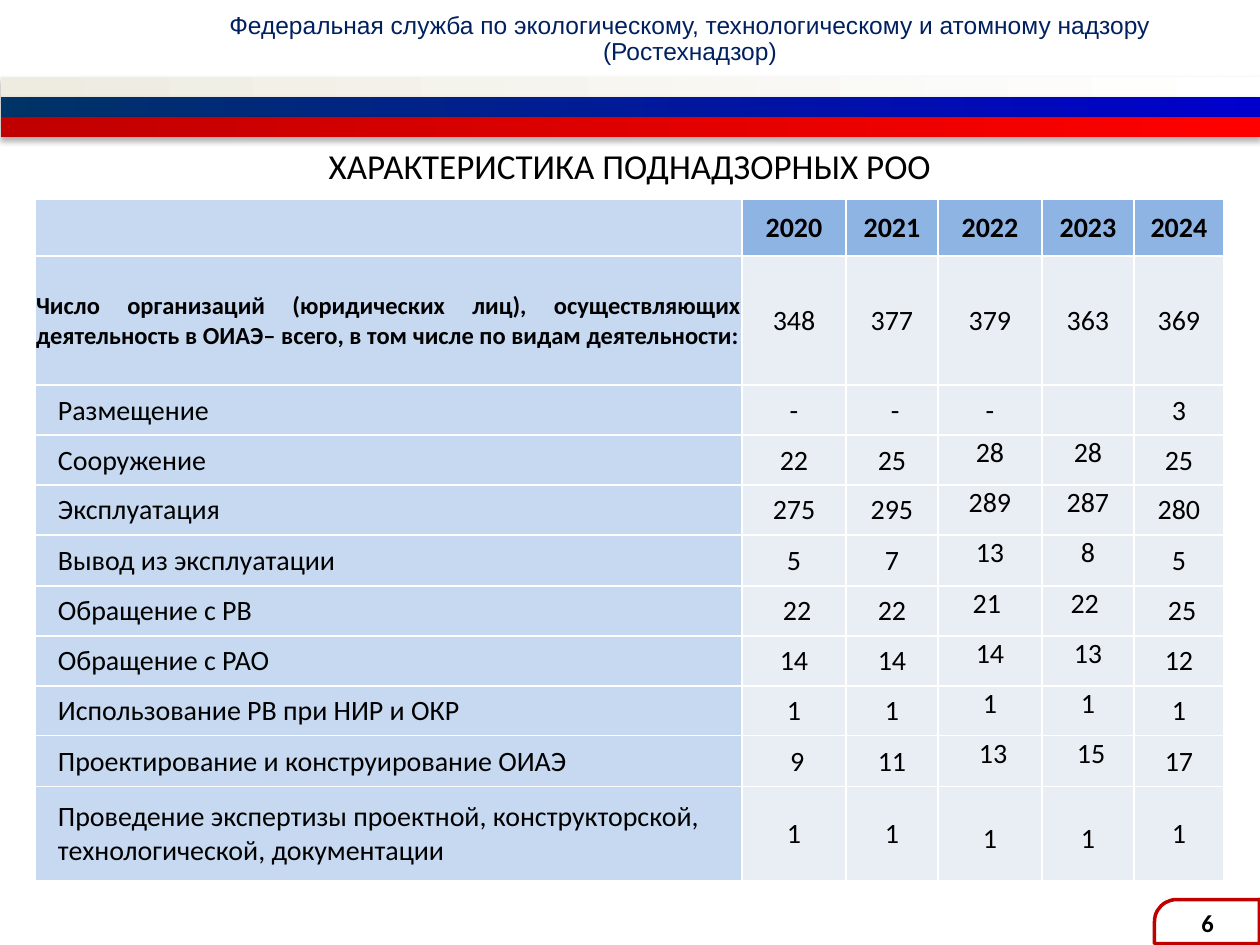
"""Build the slide with the yearly table of supervised organisations."""
import dataclasses

import lxml.etree
import pptx
import pptx.dml.color
import pptx.enum.shapes
import pptx.enum.text
import pptx.oxml
import pptx.oxml.ns
import pptx.util

ALIGN = pptx.enum.text.PP_ALIGN
ANCHOR = pptx.enum.text.MSO_ANCHOR
SHAPE = pptx.enum.shapes.MSO_SHAPE
SCALE = 914400 / 126


@dataclasses.dataclass(frozen=True)
class Theme:
    body: str = "Calibri"
    head: str = "Arial"
    ink: str = "000000"
    navy: str = "002060"
    edge: str = "FFFFFF"
    frame: str = "C00000"
    label: str = "C6D9F1"
    year: str = "8EB4E3"
    cell: str = "E9EDF4"
    bands: tuple = (("EEECE1", "FFFFFF"), ("003366", "0000CC"), ("C00000", "FF0000"))
    small: int = 14
    base: int = 16
    large: int = 20


def px(num):
    return pptx.util.Emu(round(num * SCALE))


def rgb(code):
    return pptx.dml.color.RGBColor.from_string(code)


def write(frame, text, font, size, color, bold=False, align=ALIGN.CENTER, lead=None):
    for num, line in enumerate(text.split("\n")):
        para = frame.add_paragraph() if num else frame.paragraphs[0]
        para.alignment = align
        if lead:
            para.line_spacing = pptx.util.Pt(lead)
        run = para.add_run()
        run.text = line
        run.font.name = font
        run.font.size = pptx.util.Pt(size)
        run.font.bold = bold
        run.font.color.rgb = rgb(color)


class Deck:
    def __init__(self, theme):
        self.theme = theme
        self.file = pptx.Presentation()
        self.file.slide_width, self.file.slide_height = px(1260), px(945)
        self.slide = self.file.slides.add_slide(self.file.slide_layouts[6])

    def text(self, area, text, anchor=ANCHOR.MIDDLE, **style):
        frame = self.slide.shapes.add_textbox(*map(px, area)).text_frame
        frame.word_wrap = True
        frame.vertical_anchor = anchor
        frame.margin_left = frame.margin_right = px(13)
        frame.margin_top = frame.margin_bottom = 0
        write(frame, text, **style)

    def band(self, area, colors):
        shape = self.slide.shapes.add_shape(SHAPE.RECTANGLE, *map(px, area))
        shape.line.fill.background()
        shape.fill.gradient()
        shape.fill.gradient_angle = 0
        for stop, color in zip(shape.fill.gradient_stops, colors):
            stop.color.rgb = rgb(color)
        shape.shadow.inherit = False
        glow = shape.element.spPr.find(pptx.oxml.ns.qn("a:effectLst"))
        glow.append(pptx.oxml.parse_xml(
            f'<a:outerShdw {pptx.oxml.ns.nsdecls("a")} blurRad="44450" dist="27940" '
            'dir="5400000" algn="ctr" rotWithShape="0"><a:srgbClr val="000000">'
            '<a:alpha val="32000"/></a:srgbClr></a:outerShdw>'))

    def tab(self, area):
        shape = self.slide.shapes.add_shape(SHAPE.ROUND_1_RECTANGLE, *map(px, area))
        shape.adjustments[0] = 0.5
        shape.rotation = 270
        shape.shadow.inherit = False
        shape.fill.background()
        shape.line.color.rgb = rgb(self.theme.frame)
        shape.line.width = pptx.util.Pt(2)

    def cell(self, cell, text, fill, left=1, top=1, anchor=ANCHOR.MIDDLE, **style):
        cell.margin_left, cell.margin_top = px(left), px(top)
        cell.margin_right, cell.margin_bottom = px(1), 0
        cell.vertical_anchor = anchor
        props = cell._tc.get_or_add_tcPr()
        for side in "LRTB":
            line = lxml.etree.SubElement(props, pptx.oxml.ns.qn(f"a:ln{side}"), w="12700")
            solid = lxml.etree.SubElement(line, pptx.oxml.ns.qn("a:solidFill"))
            lxml.etree.SubElement(solid, pptx.oxml.ns.qn("a:srgbClr"), val=self.theme.edge)
        cell.fill.solid()
        cell.fill.fore_color.rgb = rgb(fill)
        if text:
            write(cell.text_frame, text, font=self.theme.body, color=self.theme.ink, **style)

    def table(self, left, top, cols, rows, data):
        look = self.theme
        area = map(px, (left, top, sum(cols), sum(rows)))
        table = self.slide.shapes.add_table(len(rows), len(cols), *area).table
        for col, wide in zip(table.columns, cols):
            col.width = px(wide)
        for row, tall in zip(table.rows, rows):
            row.height = px(tall)
        for r, line in enumerate(data):
            for c, text in enumerate(line):
                style = {"fill": look.cell, "size": look.base}
                if c == 0:
                    style["fill"] = look.label
                    if r == 1:
                        style.update(size=look.small, bold=True, align=ALIGN.JUSTIFY)
                    else:
                        style.update(left=23, align=ALIGN.LEFT)
                elif r == 0:
                    style.update(fill=look.year, bold=True)
                elif r > 2 and c in (3, 4):
                    style.update(anchor=ANCHOR.TOP, top=35 if r == len(rows) - 1 else 1)
                self.cell(table.cell(r, c), text, **style)


DATA = [
    ("", "2020", "2021", "2022", "2023", "2024"),
    ("Число организаций (юридических лиц), осуществляющих деятельность в ОИАЭ– всего, "
     "в том числе по видам деятельности:", "348", "377", "379", "363", "369"),
    ("Размещение", "-", " -", "-", "", "3"),
    ("Сооружение", "22", "25", "28", "28", "25"),
    ("Эксплуатация", "275", "295", "289", "287", "280"),
    ("Вывод из эксплуатации", "5", "7", "13", "8", "5"),
    ("Обращение с РВ", " 22", "22", "21 ", "22 ", " 25"),
    ("Обращение с РАО", "14", "14", "14", "13", "12"),
    ("Использование РВ при НИР и ОКР", "1", "1", "1", "1", "1"),
    ("Проектирование и конструирование ОИАЭ", " 9", "11", " 13", " 15", "17"),
    ("Проведение экспертизы проектной, конструкторской, технологической, документации",
     "1", "1", "1", "1", "1"),
]


def main():
    look = Theme()
    deck = Deck(look)
    deck.text((123, 13, 1134, 54),
              "Федеральная служба по экологическому, технологическому и атомному надзору\n"
              "(Ростехнадзор)",
              anchor=ANCHOR.TOP, font=look.head, size=look.small, color=look.navy, lead=15)
    for num, colors in enumerate(look.bands):
        deck.band((1, 77 + 20 * num, 1259, 20), colors)
    deck.tab((1185, 869, 44, 105))
    deck.text((0, 131, 1260, 68), "ХАРАКТЕРИСТИКА ПОДНАДЗОРНЫХ РОО",
              font=look.body, size=look.large, color=look.ink)
    deck.text((1155, 900, 105, 45), "6",
              font=look.body, size=look.small, color=look.ink, bold=True)
    deck.table(35, 199, [707, 104, 92, 104, 92, 90],
               [57, 129] + [50, 50, 50, 51] * 2 + [94], DATA)
    deck.file.save("out.pptx")


if __name__ == "__main__":
    main()
